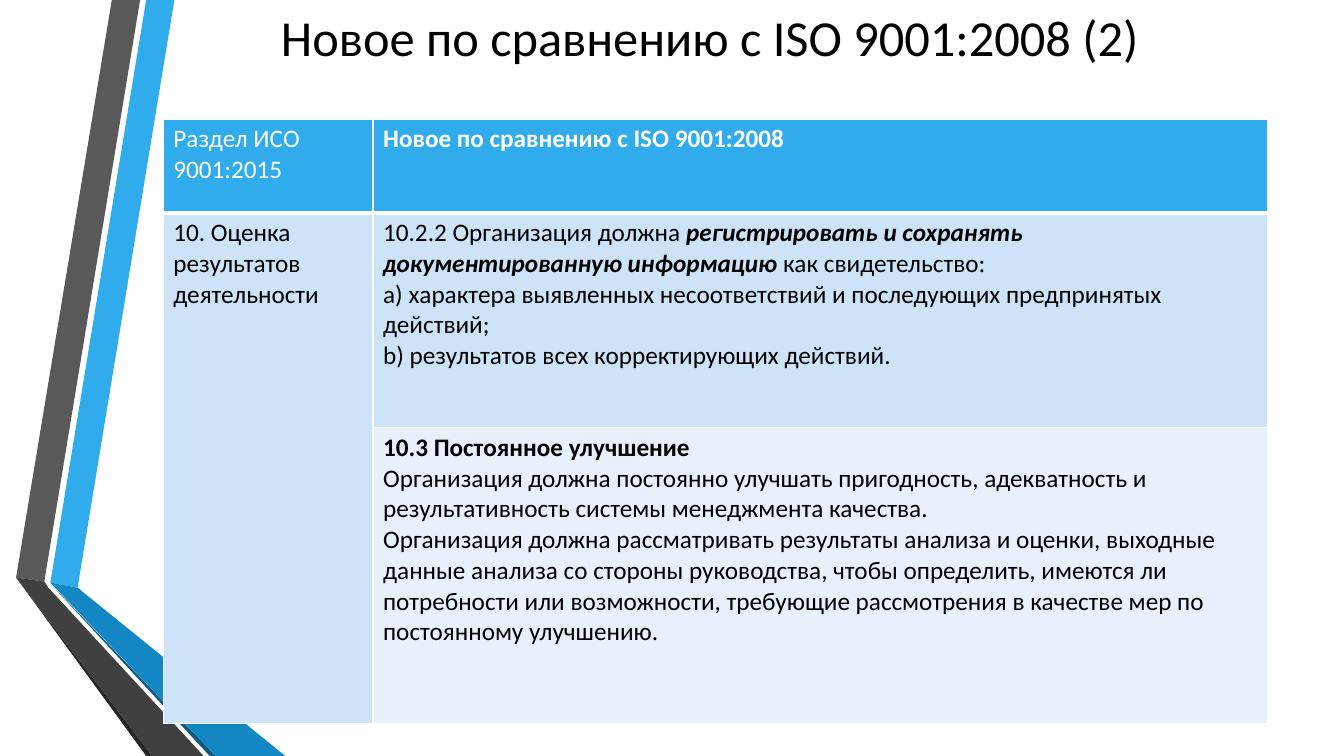
from dataclasses import dataclass

from lxml.etree import SubElement
from pptx import Presentation
from pptx.dml.color import RGBColor
from pptx.enum.text import MSO_ANCHOR as Anchor, PP_ALIGN as Align
from pptx.oxml.ns import qn
from pptx.util import Inches, Pt


@dataclass(frozen=True)
class Theme:
    font: str = "Calibri"
    title_size: int = 36
    body_size: int = 18
    text: str = "000000"
    white: str = "FFFFFF"
    blue: str = "30ACEC"
    blue_dark: str = "1287C3"
    blue_shadow: str = "0C5A82"
    gray: str = "595959"
    gray_dark: str = "404040"
    gray_shadow: str = "262626"
    band: str = "CDE3F8"
    band_light: str = "E8F1FB"
    border: int = 1
    header_border: int = 3


THEME = Theme()
BOLD = {"bold": True}
BOLD_ITALIC = {"bold": True, "italic": True}

TITLE = "Новое по сравнению с ISO 9001:2008 (2) "
TITLE_BOX = (1.62, 0, 10.96, 0.72)

RIBBONS = [
    (THEME.blue, [(0.5, 5.78), (0.77, 5.83), (1.73, 0), (1.45, 0)]),
    (THEME.gray, [(1.39, 0), (1.11, 0), (0.16, 5.73), (0.44, 5.77)]),
    (THEME.gray_shadow, [(0.16, 5.73), (1.45, 7.5), (1.51, 7.5)]),
    (THEME.blue_shadow, [(0.5, 5.79), (2.08, 7.5), (2.14, 7.5)]),
    (THEME.blue_dark, [(0.5, 5.78), (2.14, 7.5), (2.83, 7.5), (0.77, 5.83)]),
    (THEME.gray_dark, [(2.02, 7.5), (0.48, 5.83), (0.44, 5.77), (0.16, 5.73), (1.51, 7.5)]),
]

TABLE_LEFT, TABLE_TOP = 1.62, 1.18
COLUMN_WIDTHS = [2.08, 8.87]
ROW_HEIGHTS = [0.93, 2.13, 2.94]
ROW_FILLS = [THEME.blue, THEME.band, THEME.band_light]

# Each cell is a list of paragraphs; each paragraph is a list of (text, format) runs.
SECTION_HEADER = [[("Раздел ИСО 9001:2015", {})]]
CHANGES_HEADER = [[("Новое по сравнению с ISO 9001:2008", BOLD)]]
SECTION = [[("10. Оценка результатов деятельности", {})]]
RECORDS = [
    [("10.2.2 Организация должна ", {}),
     ("регистрировать и сохранять документированную информацию ", BOLD_ITALIC),
     ("как свидетельство:", {})],
    [("a) характера выявленных несоответствий и последующих предпринятых действий;", {})],
    [("b) результатов всех корректирующих действий.", {})],
]
IMPROVEMENT = [
    [("10.3 Постоянное улучшение", BOLD)],
    [("Организация должна постоянно улучшать пригодность, адекватность и "
      "результативность системы менеджмента качества.", {})],
    [("Организация должна рассматривать результаты анализа и оценки, выходные данные "
      "анализа со стороны руководства, чтобы определить, имеются ли потребности или "
      "возможности, требующие рассмотрения в качестве мер по постоянному улучшению.", {})],
]
ROWS = [
    (SECTION_HEADER, CHANGES_HEADER),
    (SECTION, RECORDS),
    ([], IMPROVEMENT),
]


def fill_solid(target, color):
    target.fill.solid()
    target.fill.fore_color.rgb = RGBColor.from_string(color)


def add_run(paragraph, text, size, color, **formats):
    run = paragraph.add_run()
    run.text = text
    for name, value in {"name": THEME.font, "size": Pt(size), **formats}.items():
        setattr(run.font, name, value)
    run.font.color.rgb = RGBColor.from_string(color)


def add_ribbon(slide, color, points):
    corners = [(Inches(x), Inches(y)) for x, y in points]
    builder = slide.shapes.build_freeform(*corners[0])
    builder.add_line_segments(corners[1:], close=True)
    shape = builder.convert_to_shape()
    shape.shadow.inherit = False
    fill_solid(shape, color)
    shape.line.fill.background()


def add_title(slide):
    box = slide.shapes.add_textbox(*map(Inches, TITLE_BOX))
    frame = box.text_frame
    frame.word_wrap = True
    frame.vertical_anchor = Anchor.MIDDLE
    paragraph = frame.paragraphs[0]
    paragraph.alignment = Align.CENTER
    add_run(paragraph, TITLE, THEME.title_size, THEME.text)


def add_borders(cell, widths):
    """Draw white cell borders; widths maps the sides L, R, T, B to points."""
    properties = cell._tc.get_or_add_tcPr()
    for side, width in widths.items():
        line = SubElement(properties, qn(f"a:ln{side}"), w=str(Pt(width)))
        fill = SubElement(line, qn("a:solidFill"))
        SubElement(fill, qn("a:srgbClr"), val=THEME.white)


def fill_cell(cell, paragraphs, color):
    frame = cell.text_frame
    for index, runs in enumerate(paragraphs):
        paragraph = frame.add_paragraph() if index else frame.paragraphs[0]
        for text, formats in runs:
            add_run(paragraph, text, THEME.body_size, color, **formats)


def add_changes_table(slide):
    size = (sum(COLUMN_WIDTHS), sum(ROW_HEIGHTS))
    frame = slide.shapes.add_table(len(ROWS), len(COLUMN_WIDTHS),
                                   *map(Inches, (TABLE_LEFT, TABLE_TOP, *size)))
    table = frame.table
    for column, width in zip(table.columns, COLUMN_WIDTHS):
        column.width = Inches(width)
    for row, height in zip(table.rows, ROW_HEIGHTS):
        row.height = Inches(height)
    table.cell(1, 0).merge(table.cell(2, 0))

    for row_index, row in enumerate(ROWS):
        widths = dict.fromkeys("LRTB", THEME.border)
        if row_index < 2:
            widths["B" if row_index == 0 else "T"] = THEME.header_border
        text_color = THEME.text if row_index else THEME.white
        for column_index, paragraphs in enumerate(row):
            cell = table.cell(row_index, column_index)
            add_borders(cell, widths)
            fill_solid(cell, THEME.band if cell.is_spanned else ROW_FILLS[row_index])
            fill_cell(cell, paragraphs, text_color)


def main():
    presentation = Presentation()
    presentation.slide_width = Inches(13.33)
    presentation.slide_height = Inches(7.5)
    slide = presentation.slides.add_slide(presentation.slide_layouts[6])
    for color, points in RIBBONS:
        add_ribbon(slide, color, points)
    add_title(slide)
    add_changes_table(slide)
    presentation.save("out.pptx")


if __name__ == "__main__":
    main()
